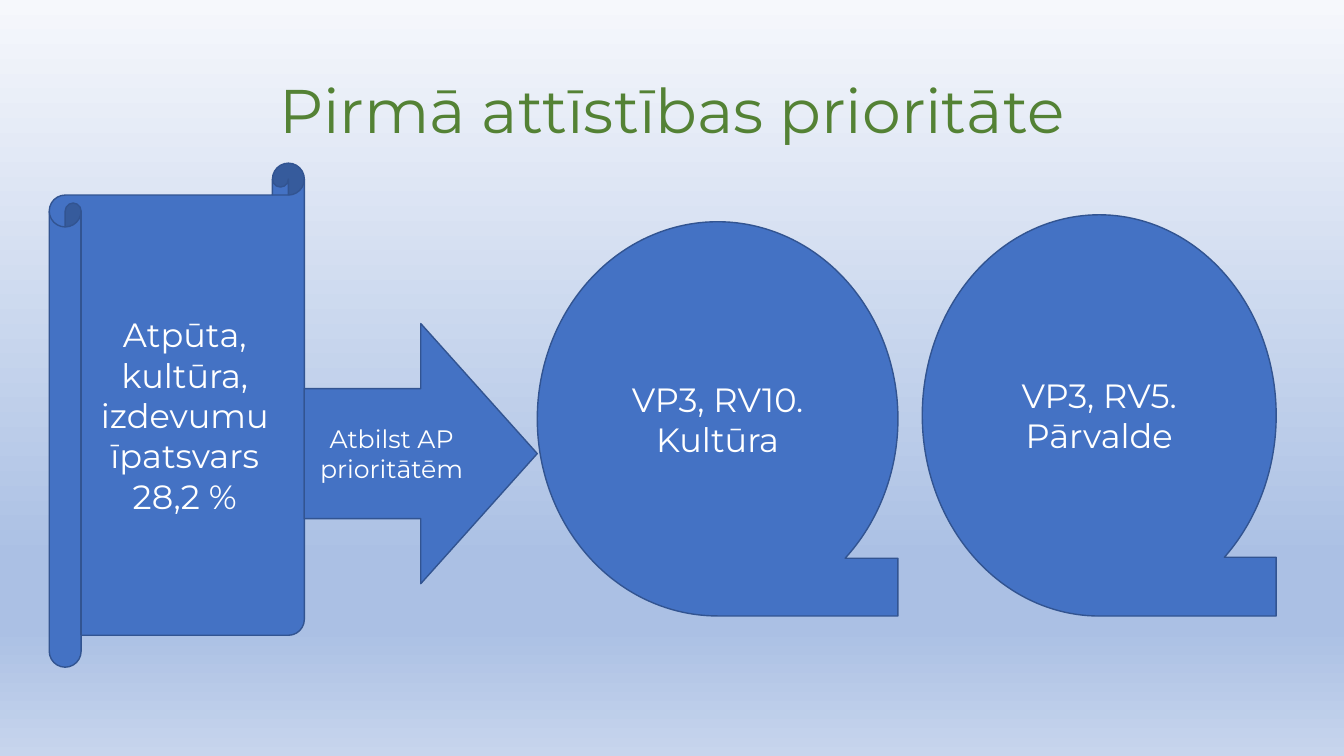
"""Build the slide on the first development priority."""
from copy import deepcopy

from pptx import Presentation
from pptx.dml.color import RGBColor
from pptx.enum.shapes import MSO_SHAPE as Preset
from pptx.enum.text import MSO_ANCHOR as Anchor, PP_ALIGN as Align
from pptx.oxml.ns import qn
from pptx.util import Pt


def color(value):
    return RGBColor.from_string(value)


class SlideBuilder:
    font = "Montserrat"
    fill = "4472C4"
    outline = "325491"
    text_color = "FFFFFF"
    title_color = "548235"

    def __init__(self, slide):
        self.slide = slide

    def background(self, stops):
        fill = self.slide.background.fill
        fill.gradient()
        fill.gradient_angle = 270
        stop_list = self.slide.element.find(".//" + qn("a:gsLst"))
        while len(stop_list) < len(stops):
            stop_list.append(deepcopy(stop_list[0]))
        for stop, (position, value) in zip(fill.gradient_stops, stops):
            stop.position = position
            stop.color.rgb = color(value)

    def set_text(self, shape, text, size, text_color):
        frame = shape.text_frame
        frame.text = text
        frame.word_wrap = True
        frame.vertical_anchor = Anchor.MIDDLE
        paragraph = frame.paragraphs[0]
        paragraph.alignment = Align.CENTER
        font = paragraph.runs[0].font
        font.name = self.font
        font.size = Pt(size)
        font.color.rgb = color(text_color)
        return paragraph

    def title(self, text, box):
        shape = self.slide.shapes.add_textbox(*map(Pt, box))
        paragraph = self.set_text(shape, text, 44, self.title_color)
        paragraph.line_spacing = 0.9

    def block(self, preset, text, box, size=24):
        shape = self.slide.shapes.add_shape(preset, *map(Pt, box))
        shape.shadow.inherit = False
        shape.fill.solid()
        shape.fill.fore_color.rgb = color(self.fill)
        shape.line.color.rgb = color(self.outline)
        shape.line.width = Pt(1)
        self.set_text(shape, text, size, self.text_color)


def main():
    presentation = Presentation()
    presentation.slide_width = Pt(960)
    presentation.slide_height = Pt(540)
    slide = presentation.slides.add_slide(presentation.slide_layouts[6])
    builder = SlideBuilder(slide)
    builder.background(
        [(0, "F6F8FC"), (0.74, "ABC0E4"), (0.83, "ABC0E4"), (1, "C7D5ED")]
    )
    builder.title("Pirmā attīstības prioritāte", (66, 28.8, 828, 104.4))
    builder.block(
        Preset.HORIZONTAL_SCROLL,
        "Atpūta, kultūra, izdevumu īpatsvars 28,2 %",
        (35.2, 116.6, 182.2, 360),
    )
    builder.block(
        Preset.RIGHT_ARROW,
        "Atbilst AP prioritātēm",
        (217.4, 231.1, 166.4, 185.8),
        size=18,
    )
    tape = Preset.FLOWCHART_SEQUENTIAL_ACCESS_STORAGE
    builder.block(tape, "VP3, RV10. Kultūra", (383.8, 158.4, 257.6, 281.6))
    builder.block(tape, "VP3, RV5. Pārvalde", (658.8, 153.4, 252.8, 286.6))
    presentation.save("out.pptx")


if __name__ == "__main__":
    main()
